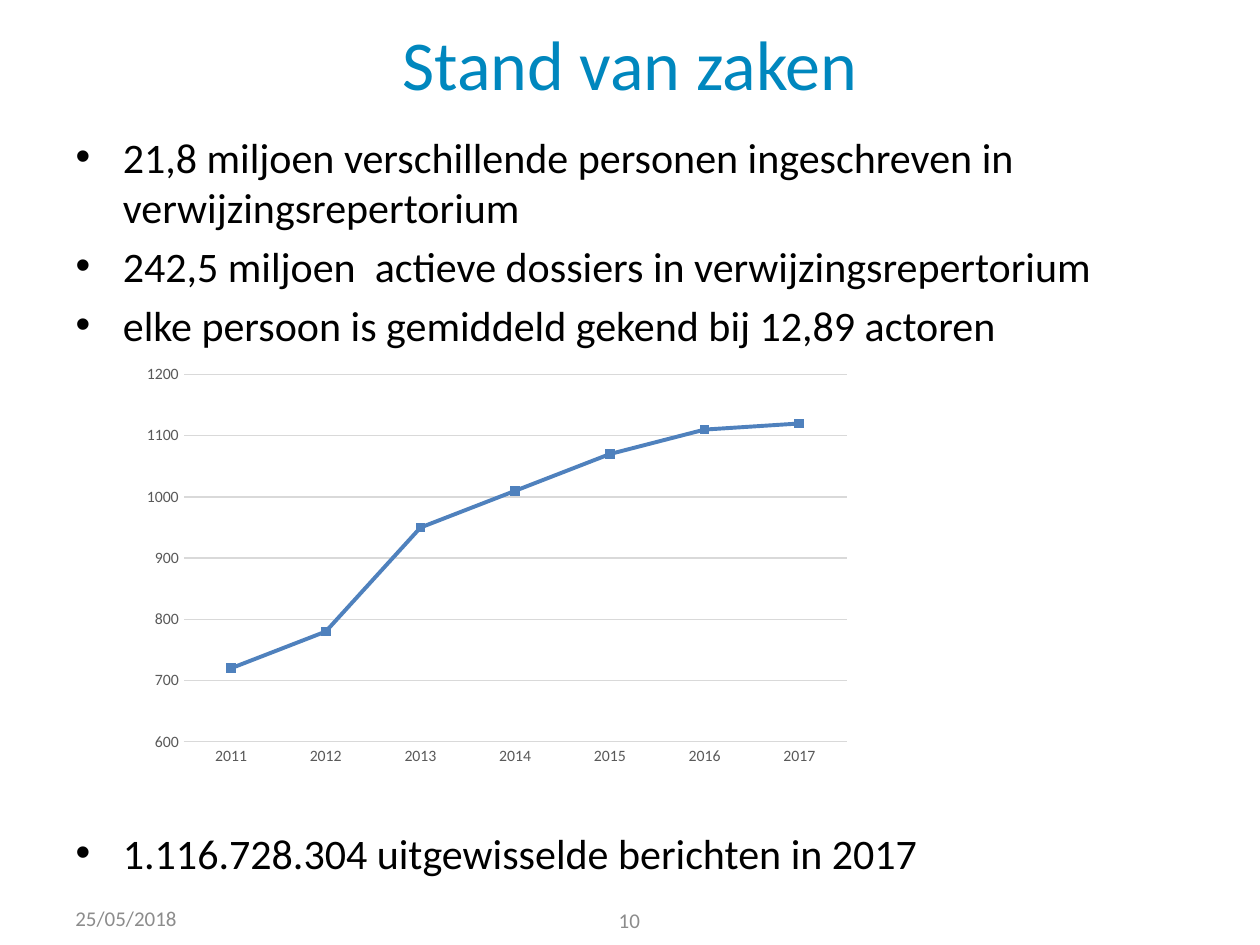
from dataclasses import dataclass

from lxml import etree
from pptx import Presentation
from pptx.chart.data import CategoryChartData
from pptx.dml.color import RGBColor
from pptx.enum.chart import XL_CHART_TYPE, XL_TICK_MARK
from pptx.enum.text import MSO_ANCHOR, MSO_AUTO_SIZE, PP_ALIGN
from pptx.oxml.ns import qn
from pptx.util import Inches, Pt

LINE_CHART = XL_CHART_TYPE.LINE
NO_TICKS = XL_TICK_MARK.NONE
LEFT, CENTER = PP_ALIGN.LEFT, PP_ALIGN.CENTER
TOP, MIDDLE = MSO_ANCHOR.TOP, MSO_ANCHOR.MIDDLE
NO_AUTOFIT = MSO_AUTO_SIZE.NONE


@dataclass(frozen=True)
class Theme:
    font: str = "Calibri"
    title_color: str = "0087BE"
    text_color: str = "000000"
    footer_color: str = "8C8C8C"
    axis_color: str = "595959"
    grid_color: str = "D9D9D9"
    series_color: str = "4F81BD"
    title_size: float = 40
    body_size: float = 24
    footer_size: float = 12
    axis_size: float = 9
    grid_width: float = 0.75
    series_width: float = 2.25


def format_font(font, name, size, color):
    font.name = name
    font.size = Pt(size)
    font.color.rgb = RGBColor.from_string(color)


def write_paragraph(para, text, *, name, size, color, align=LEFT, before=0):
    para.alignment = align
    para.space_before = Pt(before)
    span = para.add_run()
    span.text = text
    format_font(span.font, name, size, color)


def place(shape, left, top, width, height):
    shape.left, shape.top = Inches(left), Inches(top)
    shape.width, shape.height = Inches(width), Inches(height)


def set_plot_area(chart, **fractions):
    """Fix the inner plot area as fractions (x, y, w, h) of the chart."""
    plot_area = chart._chartSpace.chart.plotArea
    for old_layout in plot_area.findall(qn("c:layout")):
        plot_area.remove(old_layout)
    layout = etree.Element(qn("c:layout"))
    manual = etree.SubElement(layout, qn("c:manualLayout"))
    settings = {"layoutTarget": "inner", "xMode": "edge", "yMode": "edge", **fractions}
    for tag, value in settings.items():
        etree.SubElement(manual, qn(f"c:{tag}")).set("val", str(value))
    plot_area.insert(0, layout)


class SlideBuilder:
    def __init__(self, page, theme):
        self.page = page
        self.theme = theme

    def prepare_frame(self, shape, anchor):
        frame = shape.text_frame
        frame.word_wrap = True
        frame.auto_size = NO_AUTOFIT
        frame.vertical_anchor = anchor
        return frame

    def title(self, text, *bounds):
        theme = self.theme
        box = self.page.shapes.title
        place(box, *bounds)
        frame = self.prepare_frame(box, MIDDLE)
        write_paragraph(frame.paragraphs[0], text, name=theme.font,
                        size=theme.title_size, color=theme.title_color, align=CENTER)

    def bullets(self, items, *bounds):
        """Fill the body with (text, space before in points) pairs."""
        theme = self.theme
        box = self.page.placeholders[1]
        place(box, *bounds)
        frame = self.prepare_frame(box, TOP)
        for index, (text, before) in enumerate(items):
            para = frame.add_paragraph() if index else frame.paragraphs[0]
            write_paragraph(para, text, name=theme.font, size=theme.body_size,
                            color=theme.text_color, before=before)

    def footer(self, text, *bounds, align=LEFT):
        theme = self.theme
        box = self.page.shapes.add_textbox(*map(Inches, bounds))
        frame = self.prepare_frame(box, MIDDLE)
        write_paragraph(frame.paragraphs[0], text, name=theme.font,
                        size=theme.footer_size, color=theme.footer_color, align=align)

    def grid_line(self, line):
        line.color.rgb = RGBColor.from_string(self.theme.grid_color)
        line.width = Pt(self.theme.grid_width)

    def line_chart(self, categories, values, *bounds):
        theme = self.theme
        data = CategoryChartData()
        data.categories = categories
        data.add_series("Series 1", values)
        chart = self.page.shapes.add_chart(LINE_CHART, *map(Inches, bounds), data).chart
        chart.has_legend = chart.has_title = False
        chart.plots[0].vary_by_categories = False
        set_plot_area(chart, x=0.08, y=0.07, w=0.88, h=0.84)

        series = chart.plots[0].series[0]
        series.smooth = False
        series.marker.style = None
        series.format.line.color.rgb = RGBColor.from_string(theme.series_color)
        series.format.line.width = Pt(theme.series_width)

        for axis in (chart.category_axis, chart.value_axis):
            axis.major_tick_mark = axis.minor_tick_mark = NO_TICKS
            format_font(axis.tick_labels.font, theme.font, theme.axis_size, theme.axis_color)
        self.grid_line(chart.category_axis.format.line)
        value_axis = chart.value_axis
        value_axis.minimum_scale, value_axis.maximum_scale = 600, 1200
        value_axis.major_unit = 100
        value_axis.format.line.fill.background()
        self.grid_line(value_axis.major_gridlines.format.line)


def main():
    deck = Presentation()
    deck.slide_width, deck.slide_height = Inches(10), Inches(7.5)
    builder = SlideBuilder(deck.slides.add_slide(deck.slide_layouts[1]), Theme())

    item_gap, chart_gap = 4.8, 273
    builder.title("Stand van zaken", 0.5, 0.15, 9, 0.69)
    builder.bullets([
        ("21,8 miljoen verschillende personen ingeschreven in verwijzingsrepertorium", 0),
        ("242,5 miljoen  actieve dossiers in verwijzingsrepertorium", item_gap),
        ("elke persoon is gemiddeld gekend bij 12,89 actoren", item_gap),
        ("1.116.728.304 uitgewisselde berichten in 2017", chart_gap),
    ], 0.5, 0.99, 9, 5.98)
    builder.line_chart([str(year) for year in range(2011, 2018)],
                       [720, 780, 950, 1010, 1070, 1110, 1120],
                       0.98, 2.73, 5.98, 3.47)
    builder.footer("25/05/2018", 0.5, 7.07, 2.33, 0.43)
    builder.footer("10", 3.83, 7.1, 2.33, 0.4, align=CENTER)
    deck.save("out.pptx")


if __name__ == "__main__":
    main()
